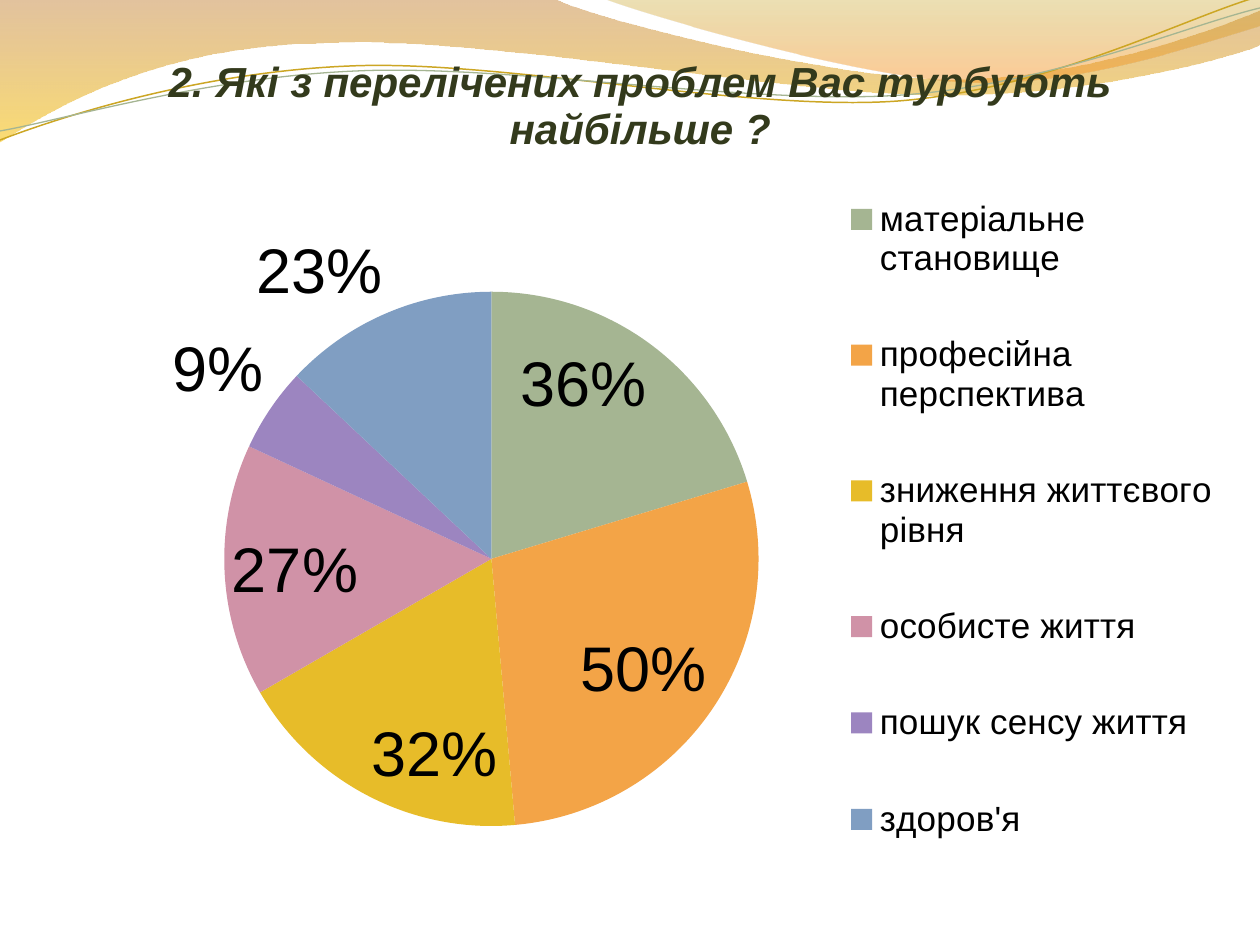
from lxml import etree
from pptx import Presentation
from pptx import util as u
from pptx.chart import data as chart_data
from pptx.dml.color import RGBColor
from pptx.enum import chart as ch
from pptx.oxml import ns, parse_xml

PX = 914400 / 126  # EMU in one px
FONT = "Arial"
BLACK = RGBColor(0x00, 0x00, 0x00)
TITLE_GREEN = RGBColor(0x33, 0x3A, 0x1C)
BROWN = RGBColor(0xC0, 0x7A, 0x28)
YELLOW = RGBColor(0xF7, 0xBF, 0x00)
OLIVE = RGBColor(0xC0, 0x97, 0x09)
ORANGE = RGBColor(0xF5, 0x93, 0x20)
GOLD = RGBColor(0xCC, 0xA6, 0x24)
SAGE = RGBColor(0xA5, 0xB5, 0x92)

# Category, value, slice colour
PROBLEMS = [
    ("матеріальне становище", 0.36, SAGE),
    ("професійна перспектива", 0.50, RGBColor(0xF3, 0xA4, 0x47)),
    ("зниження життєвого рівня", 0.32, RGBColor(0xE7, 0xBC, 0x29)),
    ("особисте життя", 0.27, RGBColor(0xD0, 0x92, 0xA7)),
    ("пошук сенсу життя", 0.09, RGBColor(0x9C, 0x85, 0xC0)),
    ("здоров'я", 0.23, RGBColor(0x80, 0x9E, 0xC2)),
]
OUTSIDE_LABELS = (4, 5)

# Band outlines: a start point, then lines (1 point) and Bézier curves (3 points)
WIDE_BAND = [
    [(0, 0)], [(554, -1)],
    [(600, 21), (837, 79), (955, 79)], [(1075, 79), (1207, 33), (1260, 11)],
    [(1261, 45)],
    [(1239, 55), (1096, 96), (940, 95)], [(784, 95), (481, 35), (324, 43)],
    [(163, 45), (58, 105), (-1, 142)],
]
RIGHT_BAND = [
    [(604, -1)],
    [(641, 14), (859, 78), (969, 82)], [(1079, 87), (1211, 40), (1260, 26)],
    [(1260, 0)],
]
GOLD_WAVE = [
    [(0, 140)], [(60, 117), (199, 72), (349, 66)],
    [(498, 59), (747, 112), (898, 101)], [(1050, 89), (1182, 19), (1257, -3)],
]
SAGE_WAVE = [
    [(0, 131)], [(59, 121), (207, 77), (357, 71)],
    [(508, 64), (752, 106), (903, 95)], [(1053, 84), (1185, 26), (1260, 8)],
]


def px(n):
    return u.Emu(round(n * PX))


def add_curve(slide, box, segments, close):
    """Build a freeform at the box's corner and bend its 3-point segments."""
    left, top = box[:2]
    points = [(left + x, top + y) for seg in segments for x, y in seg]
    builder = slide.shapes.build_freeform(*points[0], scale=PX)
    builder.add_line_segments(points[1:], close=close)
    sp = builder.convert_to_shape()
    sp.shadow.inherit = False
    lines = iter(list(sp._element.iter(ns.qn("a:lnTo"))))
    for seg in segments[1:]:
        parts = [next(lines) for _ in seg]
        if len(seg) == 3:
            curve = etree.Element(ns.qn("a:cubicBezTo"))
            parts[0].addprevious(curve)
            for part in parts:
                curve.append(part[0])
                part.getparent().remove(part)
    return sp


def add_band(slide, box, segments, stops):
    sp = add_curve(slide, box, segments, close=True)
    sp.line.fill.background()
    sp.fill.background()
    stop_xml = "".join(
        f'<a:gs pos="{pos * 1000}"><a:srgbClr val="{color}">'
        f'<a:alpha val="{alpha * 1000}"/></a:srgbClr></a:gs>'
        for pos, color, alpha in stops)
    grad = parse_xml(
        f'<a:gradFill {ns.nsdecls("a")} rotWithShape="1"><a:gsLst>{stop_xml}</a:gsLst>'
        '<a:lin ang="5400000" scaled="0"/></a:gradFill>')
    no_fill = sp._element.spPr.find(ns.qn("a:noFill"))
    no_fill.getparent().replace(no_fill, grad)


def add_wave(slide, box, segments, color, width):
    sp = add_curve(slide, box, segments, close=False)
    sp.fill.background()
    sp.line.color.rgb = color
    sp.line.width = u.Pt(width)


def add_header(slide, box):
    add_band(slide, box, WIDE_BAND, [(0, BROWN, 45), (100, YELLOW, 55)])
    add_band(slide, box, RIGHT_BAND, [(0, OLIVE, 30), (80, ORANGE, 45)])
    add_wave(slide, box, GOLD_WAVE, GOLD, 0.85)
    add_wave(slide, box, SAGE_WAVE, SAGE, 0.75)


def set_layout(element, index, inner=False, **fractions):
    """Place a chart part by fractions of the chart's box."""
    for old in element.findall(ns.qn("c:layout")):
        element.remove(old)
    target = '<c:layoutTarget val="inner"/>' if inner else ""
    modes = "".join(f'<c:{k}Mode val="edge"/>' for k in "xy")
    values = "".join(f'<c:{k} val="{v}"/>' for k, v in fractions.items())
    element.insert(index, parse_xml(
        f'<c:layout {ns.nsdecls("c")}><c:manualLayout>{target}{modes}{values}'
        '</c:manualLayout></c:layout>'))


def format_font(font, size, color=BLACK):
    font.name = FONT
    font.size = u.Pt(size)
    font.color.rgb = color


def add_pie(slide, box):
    data = chart_data.CategoryChartData(number_format="0%")
    data.categories = [name for name, _, _ in PROBLEMS]
    data.add_series("Series 1", [value for _, value, _ in PROBLEMS])
    chart = slide.shapes.add_chart(
        ch.XL_CHART_TYPE.PIE, *map(px, box), data).chart
    format_font(chart.font, 10)

    # Title
    chart.has_title = True
    p = chart.chart_title.text_frame.paragraphs[0]
    r = p.add_run()
    r.text = "2. Які з перелічених проблем Вас турбують найбільше ?"
    format_font(r.font, 24, TITLE_GREEN)
    r.font.bold = r.font.italic = True
    set_layout(chart.chart_title._element, 1, x=0.11, y=0.02)

    # Slices
    plot = chart.plots[0]
    plot.vary_by_categories = True
    series = plot.series[0]
    for i, (_, _, color) in enumerate(PROBLEMS):
        fill = series.points[i].format.fill
        fill.solid()
        fill.fore_color.rgb = color
    set_layout(chart._chartSpace.chart.plotArea, 0, inner=True,
               x=0.16, y=0.3, w=0.45, h=0.61)

    # Value labels
    labels = series.data_labels
    labels.show_value = True
    labels.show_percentage = False
    labels.number_format = "0%"
    labels.number_format_is_linked = False
    labels.position = ch.XL_LABEL_POSITION.INSIDE_END
    format_font(labels.font, 36)
    for i in OUTSIDE_LABELS:
        label = series.points[i].data_label
        format_font(label.font, 36)
        label.position = ch.XL_LABEL_POSITION.OUTSIDE_END

    # Legend
    chart.has_legend = True
    legend = chart.legend
    legend.position = ch.XL_LEGEND_POSITION.RIGHT
    legend.include_in_layout = False
    format_font(legend.font, 20)
    set_layout(legend._element, 1, x=0.67, y=0.13, w=0.33, h=0.86)


def main():
    prs = Presentation()
    prs.slide_width, prs.slide_height = px(1260), px(945)
    slide = prs.slides.add_slide(prs.slide_layouts[6])
    add_header(slide, (0, 0, 1260, 142))
    add_pie(slide, (29, 29, 1201, 876))
    prs.save("out.pptx")


if __name__ == "__main__":
    main()
